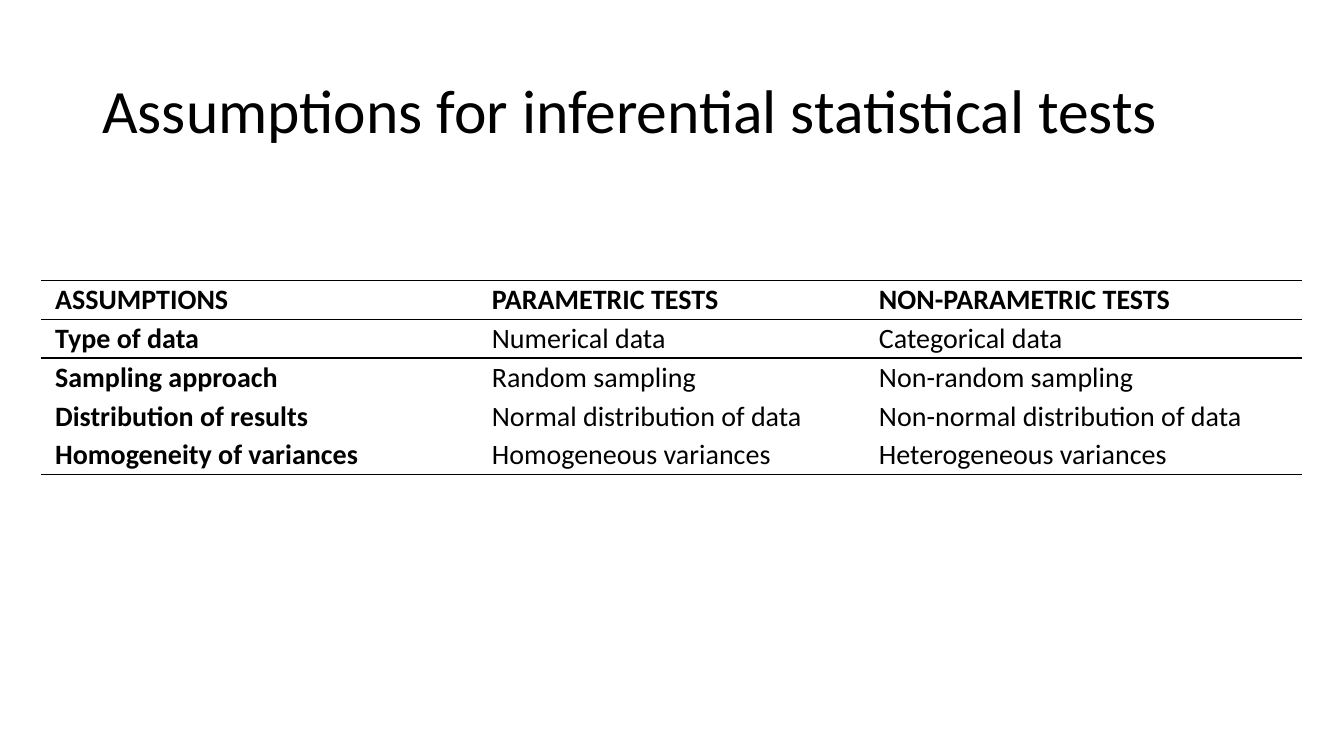
from lxml import etree
from pptx import Presentation
from pptx.dml.color import RGBColor
from pptx.enum.text import MSO_ANCHOR
from pptx.oxml.ns import qn
from pptx.util import Pt

BLACK = RGBColor(0, 0, 0)
FONT = "Calibri"
MIDDLE = MSO_ANCHOR.MIDDLE
TOP = MSO_ANCHOR.TOP
PLAIN = "{2D5ABB26-0587-4C30-8999-92F81FD0307C}"  # table style without grid

ROWS = [
    ("ASSUMPTIONS", "PARAMETRIC TESTS", "NON-PARAMETRIC TESTS"),
    ("Type of data", "Numerical data", "Categorical data"),
    ("Sampling approach", "Random sampling", "Non-random sampling"),
    ("Distribution of results", "Normal distribution of data",
     "Non-normal distribution of data"),
    ("Homogeneity of variances", "Homogeneous variances",
     "Heterogeneous variances"),
]
WIDTHS = [312, 276.5, 312.2]
HEIGHT = 27.8
# Ruled edges by row: above and below the header, and below the last row
RULES = {0: ("a:lnT", "a:lnB"), 1: ("a:lnT",), len(ROWS) - 1: ("a:lnB",)}


def style(para, text, size, space, bold=False):
    para.text = text
    para.line_spacing = space
    para.font.name = FONT
    para.font.size = Pt(size)
    para.font.bold = bold
    para.font.color.rgb = BLACK


def rule(cell, edge):
    line = etree.SubElement(cell._tc.get_or_add_tcPr(), qn(edge), w=str(Pt(1)))
    fill = etree.SubElement(line, qn("a:solidFill"))
    etree.SubElement(fill, qn("a:srgbClr"), val=str(BLACK))


deck = Presentation()
deck.slide_width = Pt(960)
deck.slide_height = Pt(540)
slide = deck.slides.add_slide(deck.slide_layouts[6])

# Title
title = slide.shapes.add_textbox(Pt(66), Pt(28.75), Pt(828), Pt(104.4))
frame = title.text_frame
frame.word_wrap = True
frame.vertical_anchor = MIDDLE
style(frame.paragraphs[0], "Assumptions for inferential statistical tests", 44, 0.9)

# Table
table = slide.shapes.add_table(
    len(ROWS), len(WIDTHS), Pt(29.4), Pt(200.2),
    Pt(sum(WIDTHS)), Pt(HEIGHT * len(ROWS))).table
table.first_row = False
table.horz_banding = False
table._tbl.tblPr.find(qn("a:tableStyleId")).text = PLAIN
for col, width in zip(table.columns, WIDTHS):
    col.width = Pt(width)

# Cells: bold header row and first column
for i, row in enumerate(ROWS):
    table.rows[i].height = Pt(HEIGHT)
    for j, text in enumerate(row):
        cell = table.cell(i, j)
        cell.margin_left = cell.margin_right = Pt(10)
        cell.margin_top = cell.margin_bottom = Pt(0)
        cell.vertical_anchor = TOP
        for edge in RULES.get(i, ()):
            rule(cell, edge)
        cell.fill.background()
        style(cell.text_frame.paragraphs[0], text, 20, 1.07, i == 0 or j == 0)

deck.save("out.pptx")
